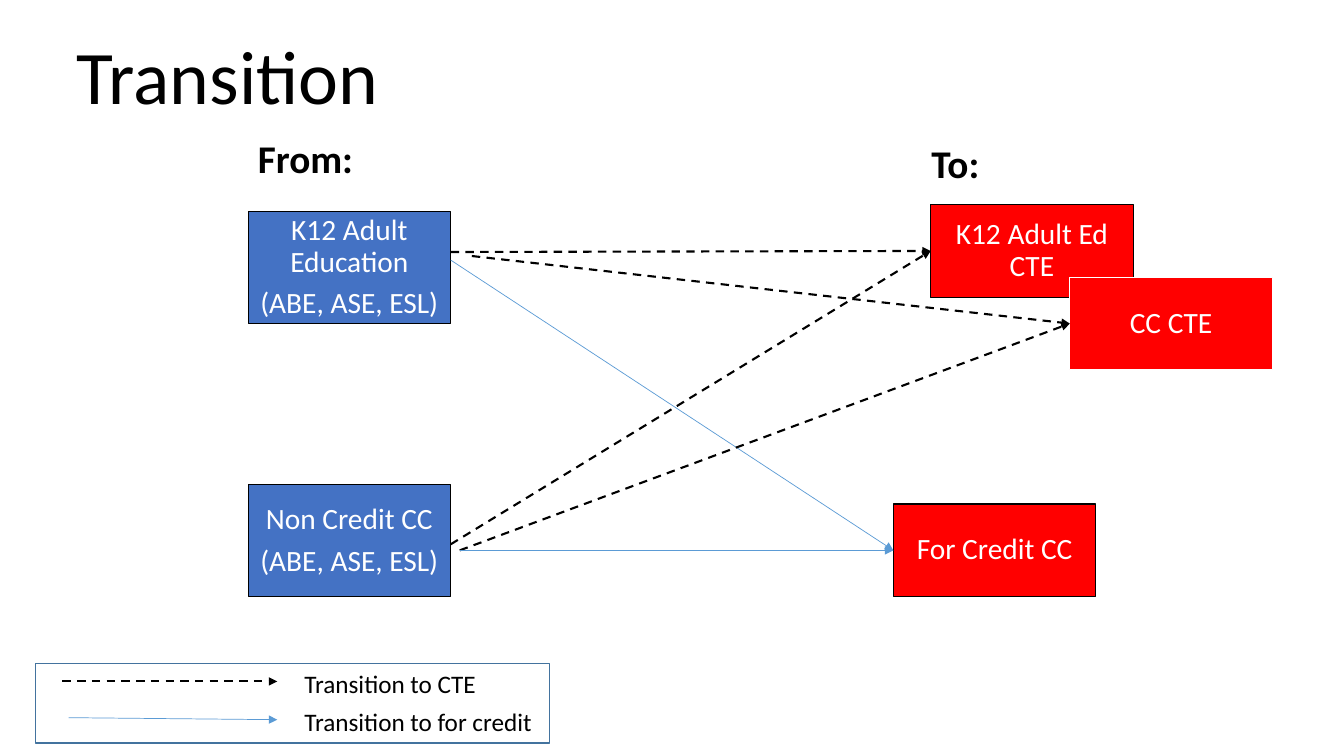
"""Build the Transition slide: adult education programs and where they lead."""
from lxml.etree import SubElement
from pptx import Presentation
from pptx.dml.color import RGBColor
from pptx.enum.dml import MSO_LINE
from pptx.enum.shapes import MSO_CONNECTOR, MSO_SHAPE
from pptx.enum.text import MSO_ANCHOR, MSO_AUTO_SIZE, PP_ALIGN
from pptx.oxml.ns import qn
from pptx.util import Inches, Pt

BLACK = RGBColor(0x00, 0x00, 0x00)
WHITE = RGBColor(0xFF, 0xFF, 0xFF)
BLUE = RGBColor(0x44, 0x72, 0xC4)
RED = RGBColor(0xFF, 0x00, 0x00)
LIGHT_BLUE = RGBColor(0x5B, 0x9B, 0xD5)
FRAME_BLUE = RGBColor(0x43, 0x73, 0x9E)


def set_text(sp, text, size, color, bold=False, align=PP_ALIGN.LEFT):
    tf = sp.text_frame
    tf.text = text
    tf.word_wrap = True
    for p in tf.paragraphs:
        p.alignment = align
        for r in p.runs:
            r.font.name = "Calibri"
            r.font.size = Pt(size)
            r.font.bold = bold
            r.font.color.rgb = color
    return tf


def add_arrow(start, end, color, width, dash):
    x1, y1, x2, y2 = [Inches(v) for v in start + end]
    cxn = s.shapes.add_connector(MSO_CONNECTOR.STRAIGHT, x1, y1, x2, y2)
    cxn.line.color.rgb = color
    cxn.line.width = Pt(width)
    cxn.line.dash_style = dash
    SubElement(cxn.line._get_or_add_ln(), qn("a:tailEnd"), type="triangle")
    SubElement(cxn._element.spPr, qn("a:effectLst"))


prs = Presentation()
prs.slide_width, prs.slide_height = Inches(13.33), Inches(7.5)
s = prs.slides.add_slide(prs.slide_layouts[5])

title = s.shapes.title
title.left, title.top = Inches(0.66), Inches(0.24)
title.width, title.height = Inches(8.57), Inches(1.01)
tf = set_text(title, "Transition", 54, BLACK)
tf.vertical_anchor = MSO_ANCHOR.TOP
tf.auto_size = MSO_AUTO_SIZE.NONE

programs = [
    ("K12 Adult Education\n(ABE, ASE, ESL)", 2.46, 2.1, 1.11, BLUE, BLACK),
    ("K12 Adult Ed CTE", 9.23, 2.03, 0.92, RED, BLACK),
    ("Non Credit CC\n(ABE, ASE, ESL)", 2.46, 4.81, 1.11, BLUE, BLACK),
    ("CC CTE", 10.61, 2.75, 0.92, RED, WHITE),
    ("For Credit CC", 8.86, 5, 0.92, RED, BLACK),
]
for text, x, y, h, fill, edge in programs:
    sp = s.shapes.add_shape(MSO_SHAPE.RECTANGLE, Inches(x), Inches(y), Inches(2.01), Inches(h))
    sp.shadow.inherit = False
    sp.fill.solid()
    sp.fill.fore_color.rgb = fill
    sp.line.color.rgb = edge
    sp.line.width = Pt(0.75)
    tf = set_text(sp, text, 21, WHITE, align=PP_ALIGN.CENTER)
    tf.vertical_anchor = MSO_ANCHOR.MIDDLE
    tf.margin_left = tf.margin_right = tf.margin_top = tf.margin_bottom = Inches(0.09)
    for p in tf.paragraphs:
        p.line_spacing = 0.9
        p.space_after = Pt(7)

to_cte = (BLACK, 1.5, MSO_LINE.DASH)
to_credit = (LIGHT_BLUE, 0.5, MSO_LINE.SOLID)
k12_cte, cc_cte, credit_cc = (9.23, 2.49), (10.61, 3.21), (8.86, 5.46)
arrows = [
    ((4.47, 2.5), k12_cte, to_cte),
    ((4.68, 2.54), cc_cte, to_cte),
    ((4.47, 2.58), credit_cc, to_credit),
    ((4.56, 5.46), cc_cte, to_cte),
    ((4.56, 5.46), credit_cc, to_credit),
    ((4.47, 5.4), k12_cte, to_cte),
    ((0.62, 6.76), (2.75, 6.76), to_cte),
    ((0.68, 7.12), (2.75, 7.14), to_credit),
]
for start, end, style in arrows:
    add_arrow(start, end, *style)

labels = [
    ("From:", 2.46, 1.28, 1.73, 0.57, 28, True),
    ("To:", 9.14, 1.33, 1.73, 0.57, 28, True),
    ("Transition to CTE", 2.92, 6.58, 2.22, 0.4, 18, False),
    ("Transition to for credit", 2.92, 6.96, 2.54, 0.4, 18, False),
]
for text, x, y, w, h, size, bold in labels:
    tb = s.shapes.add_textbox(Inches(x), Inches(y), Inches(w), Inches(h))
    set_text(tb, text, size, BLACK, bold)

legend = s.shapes.add_shape(MSO_SHAPE.RECTANGLE, Inches(0.35), Inches(6.58), Inches(5.1), Inches(0.79))
legend.shadow.inherit = False
legend.fill.background()
legend.line.color.rgb = FRAME_BLUE
legend.line.width = Pt(1)

prs.save("out.pptx")
